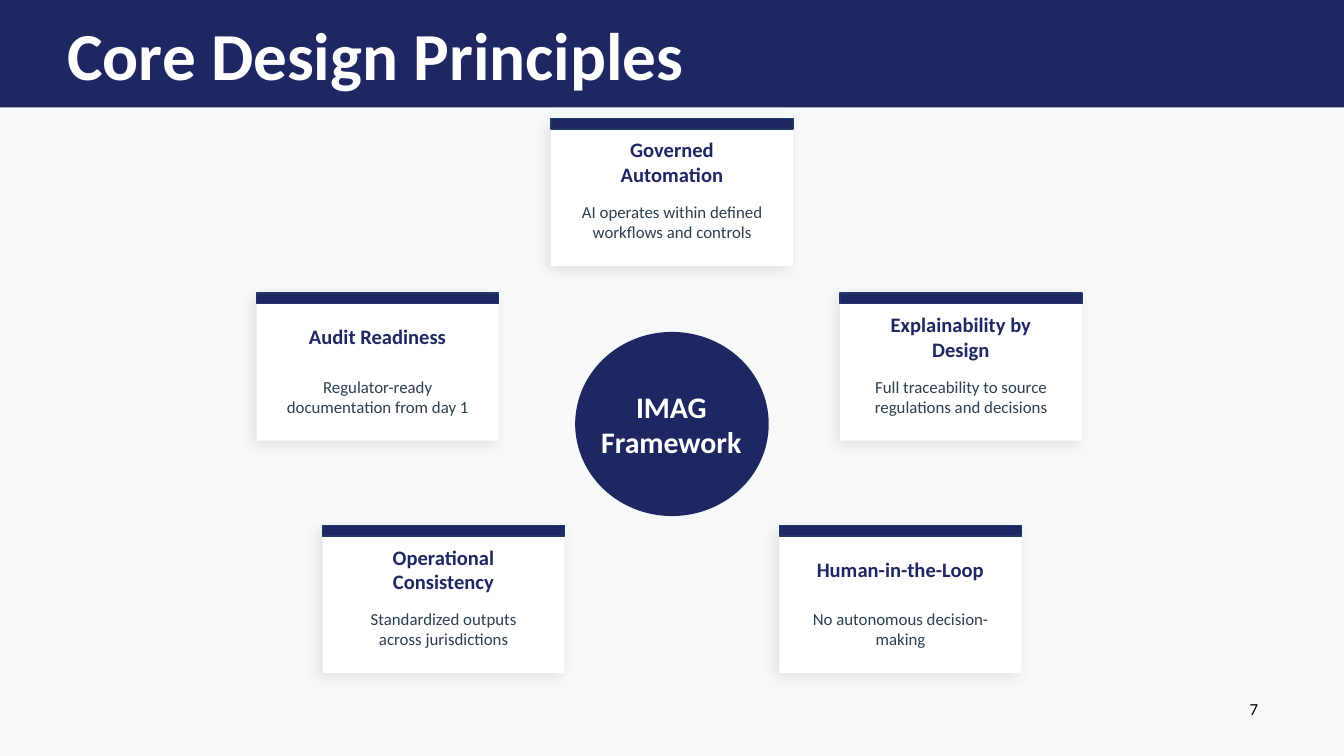
from lxml import etree
from pptx import Presentation
from pptx.dml.color import RGBColor
from pptx.enum.shapes import MSO_SHAPE
from pptx.enum.text import MSO_ANCHOR, MSO_AUTO_SIZE, PP_ALIGN
from pptx.util import Inches, Pt

RECTANGLE, OVAL = MSO_SHAPE.RECTANGLE, MSO_SHAPE.OVAL
TOP, MIDDLE = MSO_ANCHOR.TOP, MSO_ANCHOR.MIDDLE
LEFT, CENTER = PP_ALIGN.LEFT, PP_ALIGN.CENTER
NO_AUTOFIT = MSO_AUTO_SIZE.NONE
TITLE_ONLY = 5

NAVY, WHITE, SLATE = "1E2761", "FFFFFF", "2C3E50"
CARD_SHADOW = (
    '<a:effectLst xmlns:a="http://schemas.openxmlformats.org/drawingml/2006/main">'
    '<a:outerShdw blurRad="101600" dist="38100" dir="8100000" algn="bl" rotWithShape="0">'
    '<a:srgbClr val="000000"><a:alpha val="10000"/></a:srgbClr>'
    '</a:outerShdw></a:effectLst>'
)


def add_filled(shapes, kind, left, top, width, height, color, line=None):
    shape = shapes.add_shape(kind, Inches(left), Inches(top), Inches(width), Inches(height))
    shape.shadow.inherit = False
    shape.fill.solid()
    shape.fill.fore_color.rgb = RGBColor.from_string(color)
    if line:
        shape.line.color.rgb = RGBColor.from_string(line)
        shape.line.width = Pt(0.75)
    else:
        shape.line.fill.background()
    return shape


def write(box, lines, size, color, bold=False, align=CENTER, anchor=MIDDLE):
    """Fill a text box or placeholder with one paragraph per line."""
    frame = box.text_frame
    frame.word_wrap = True
    frame.auto_size = NO_AUTOFIT
    frame.vertical_anchor = anchor
    for i, line in enumerate(lines):
        paragraph = frame.add_paragraph() if i else frame.paragraphs[0]
        paragraph.alignment = align
        run = paragraph.add_run()
        run.text = line
        run.font.name = "Calibri"
        run.font.size = Pt(size)
        run.font.bold = bold
        run.font.color.rgb = RGBColor.from_string(color)


prs = Presentation()
prs.slide_width, prs.slide_height = Inches(10), Inches(10 * 9 / 16)
slide = prs.slides.add_slide(prs.slide_layouts[TITLE_ONLY])
shapes = slide.shapes
slide.background.fill.solid()
slide.background.fill.fore_color.rgb = RGBColor.from_string("F8F9FA")

# Header: the band goes behind the title placeholder
header_band = add_filled(shapes, RECTANGLE, 0, 0, 10, 0.8, NAVY)
title = shapes.title
title._element.addprevious(header_band._element)
title.left, title.top = Inches(0.5), Inches(0.2)
title.width, title.height = Inches(9), Inches(0.4)
write(title, ["Core Design Principles"], 36, WHITE, bold=True, align=LEFT)
margins = title.text_frame
margins.margin_left = margins.margin_right = margins.margin_top = margins.margin_bottom = 0

# Principle cards, clockwise from the top
principles = [
    (4.1, 0.88, "Governed Automation", "AI operates within defined workflows and controls"),
    (6.25, 2.18, "Explainability by Design",
     "Full traceability to source regulations and decisions"),
    (5.8, 3.91, "Human-in-the-Loop", "No autonomous decision-making"),
    (2.4, 3.91, "Operational Consistency", "Standardized outputs across jurisdictions"),
    (1.91, 2.18, "Audit Readiness", "Regulator-ready documentation from day 1"),
]
for left, top, name, description in principles:
    card = add_filled(shapes, RECTANGLE, left, top, 1.8, 1.1, WHITE)
    properties = card._element.spPr
    properties.replace(properties.find("{*}effectLst"), etree.fromstring(CARD_SHADOW))
    add_filled(shapes, RECTANGLE, left, top, 1.8, 0.08, NAVY, line="203864")
    heading = shapes.add_textbox(
        Inches(left + 0.1), Inches(top + 0.15), Inches(1.6), Inches(0.35))
    write(heading, [name], 11, NAVY, bold=True)
    detail = shapes.add_textbox(
        Inches(left + 0.1), Inches(top + 0.52), Inches(1.6), Inches(0.5))
    write(detail, [description], 9, SLATE)

# Central hub
hub = shapes.add_group_shape()
add_filled(hub.shapes, OVAL, 4.28, 2.47, 1.44, 1.37, NAVY)
hub_label = hub.shapes.add_textbox(Inches(4.35), Inches(2.83), Inches(1.29), Inches(0.65))
write(hub_label, ["IMAG", "Framework"], 16, WHITE, bold=True)

page_number = shapes.add_textbox(Inches(9.2), Inches(5.15), Inches(0.47), Inches(0.35))
write(page_number, ["7"], 9, "000000", align=LEFT, anchor=TOP)

prs.save("out.pptx")
